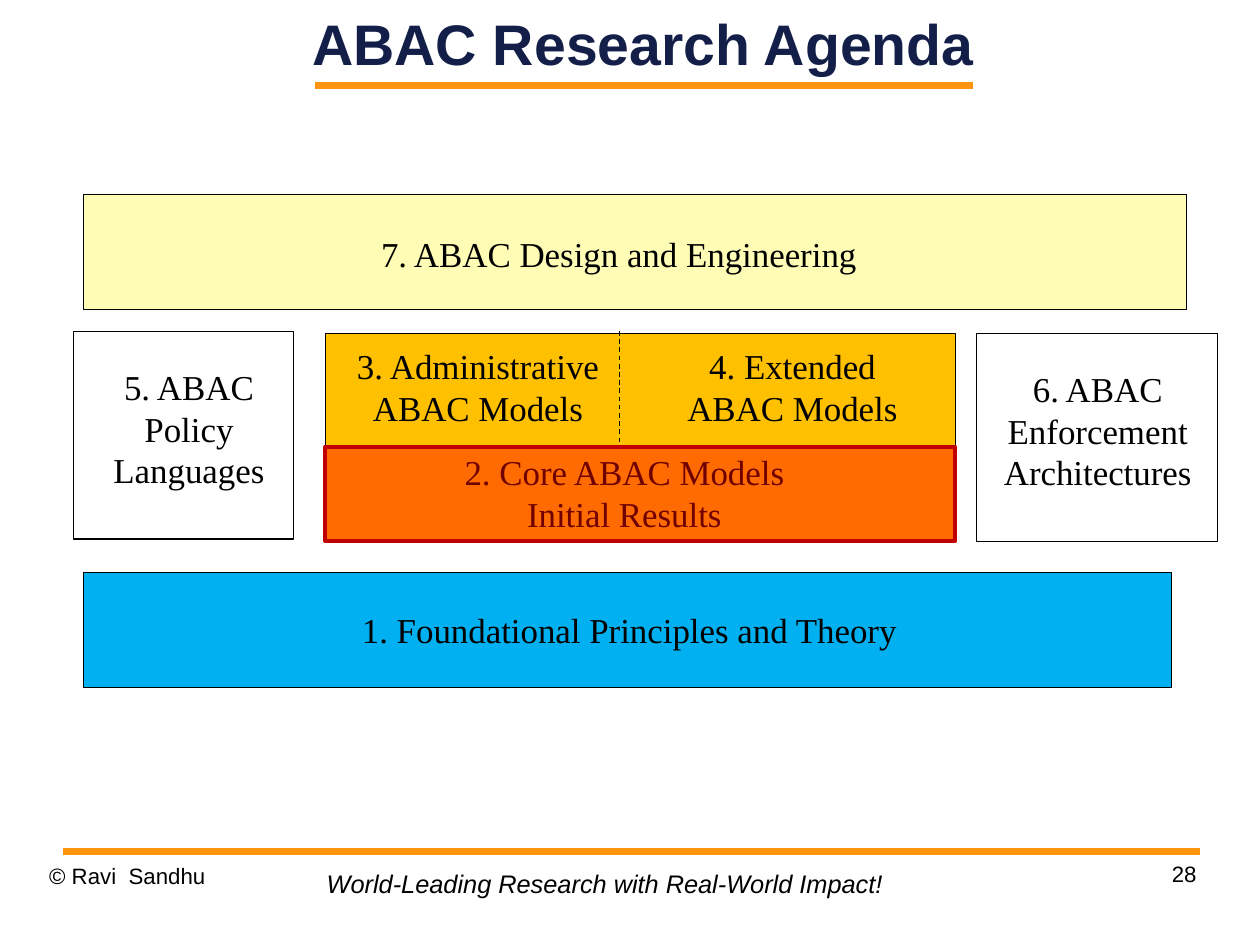
from lxml.etree import SubElement
from pptx import Presentation
from pptx.dml.color import RGBColor
from pptx.enum.dml import MSO_LINE
from pptx.enum.shapes import MSO_CONNECTOR, MSO_SHAPE
from pptx.enum.text import MSO_ANCHOR, MSO_AUTO_SIZE, PP_ALIGN
from pptx.oxml.ns import qn
from pptx.util import Pt

LABEL = {"name": "Times New Roman", "size": Pt(22)}
TITLE = {"name": "Arial", "size": Pt(36), "bold": True}
SMALL = {"name": "Arial", "size": Pt(14)}
TAGLINE = {"name": "Arial", "size": Pt(16), "italic": True}


def paint(color_format, value):
    color_format.rgb = RGBColor.from_string(value)


def write(shape, lines, style, color="000000", align=PP_ALIGN.CENTER,
          insets=(0, 0), anchor=MSO_ANCHOR.TOP, wrap=True):
    frame = shape.text_frame
    across, down = (Pt(inset) for inset in insets)
    settings = {
        "margin_left": across, "margin_right": across,
        "margin_top": down, "margin_bottom": down,
        "vertical_anchor": anchor, "word_wrap": wrap,
        "auto_size": MSO_AUTO_SIZE.NONE,
    }
    for name, value in settings.items():
        setattr(frame, name, value)
    for index, line in enumerate(lines):
        para = frame.add_paragraph() if index else frame.paragraphs[0]
        para.alignment = align
        span = para.add_run()
        span.text = line
        for name, value in style.items():
            setattr(span.font, name, value)
        paint(span.font.color, color)


def add_text(page, box, lines, style, **options):
    shape = page.shapes.add_textbox(*(Pt(length) for length in box))
    write(shape, lines, style, **options)


def add_label(page, box, *lines):
    add_text(page, box, lines, LABEL, insets=(7.92, 4))


def add_block(page, box, fill, line="000000", weight=0.75, opacity=None):
    block = page.shapes.add_shape(MSO_SHAPE.RECTANGLE, *(Pt(length) for length in box))
    block.shadow.inherit = False
    block.fill.solid()
    paint(block.fill.fore_color, fill)
    paint(block.line.color, line)
    block.line.width = Pt(weight)
    if opacity:
        color = block.fill._xPr.find(qn("a:solidFill"))[0]
        SubElement(color, qn("a:alpha")).set("val", str(opacity * 1000))


def add_line(page, ends, color, weight, dash=None):
    line = page.shapes.add_connector(
        MSO_CONNECTOR.STRAIGHT, *(Pt(length) for length in ends))
    paint(line.line.color, color)
    line.line.width = Pt(weight)
    if dash:
        line.line.dash_style = dash
    SubElement(line._element.spPr, qn("a:effectLst"))


def add_heading(page, box):
    left, top, width, height = box
    title = page.shapes.title
    for name, value in zip(("left", "top", "width", "height"), box):
        setattr(title, name, Pt(value))
    write(title, ["ABAC Research Agenda"], TITLE, "131F49", anchor=MSO_ANCHOR.MIDDLE)
    bottom = top + height
    add_line(page, (left + 25.2, bottom, left + 439.2, bottom), "FF950E", 4.31)


def add_panel(page, box, fill, offset, size, text):
    left, top = box[:2]
    add_block(page, box, fill)
    add_label(page, (left + offset[0], top + offset[1], *size), text)


def add_models(page, box):
    left, top, width, height = box
    split = top + 71.3
    divider = left + 185
    add_block(page, box, "FFC000")
    add_label(page, (left + 13, top + 69.8, 350.6, 61.2),
              "2. Core ABAC Models", "Initial Results")
    add_label(page, (left + 7.2, top + 2.9, 177.8, 61.2),
              "3. Administrative", "ABAC Models")
    add_label(page, (left + 211.7, top + 2.9, 164.9, 61.2),
              "4. Extended", "ABAC Models")
    add_line(page, (divider, top - 1.4, divider, split), "000000", 0.75, MSO_LINE.DASH)
    add_block(page, (left, split, width, top + height - split),
              "FF0000", "C00000", 2.5, 44)


def add_footer(page, box):
    left, top, width, height = box
    add_line(page, (left + 8.6, top, left + width + 2.2, top), "FF950E", 4.31)
    add_text(page, (left, top + 7.2, 185, 41), ["© Ravi  Sandhu"], SMALL,
             align=PP_ALIGN.LEFT)
    add_text(page, (left + 167.7, top + 7.2, 365.8, 26.6),
             ["World-Leading Research with Real-World Impact!"], TAGLINE,
             align=PP_ALIGN.LEFT, insets=(7.2, 3.6), wrap=False)
    add_text(page, (left + width - 185, top + 5.8, 185, 41), ["28"], SMALL,
             align=PP_ALIGN.RIGHT)


def main():
    deck = Presentation()
    deck.slide_width, deck.slide_height = Pt(793.7), Pt(595.28)
    page = deck.slides.add_slide(deck.slide_layouts[5])
    add_heading(page, (173.5, 0, 463, 54))
    add_panel(page, (52.7, 360.6, 685.4, 72.7), "00B0F0", (53.2, 18.7),
              (581, 34.6), "1. Foundational Principles and Theory")
    add_models(page, (205, 210, 396.7, 131))
    add_panel(page, (46.1, 208.8, 139, 130.8), "FFFFFF", (13.5, 17.3),
              (118.8, 87.8), "5. ABAC Policy Languages")
    add_panel(page, (615, 210, 152, 131), "FFFFFF", (7, 17.3),
              (139, 87.8), "6. ABAC Enforcement Architectures")
    add_panel(page, (52.7, 122.4, 694.8, 72.8), "FFFDB5", (46.6, 20),
              (581, 34.6), "7. ABAC Design and Engineering")
    add_footer(page, (31, 536.2, 722.8, 48))
    deck.save("out.pptx")


if __name__ == "__main__":
    main()
